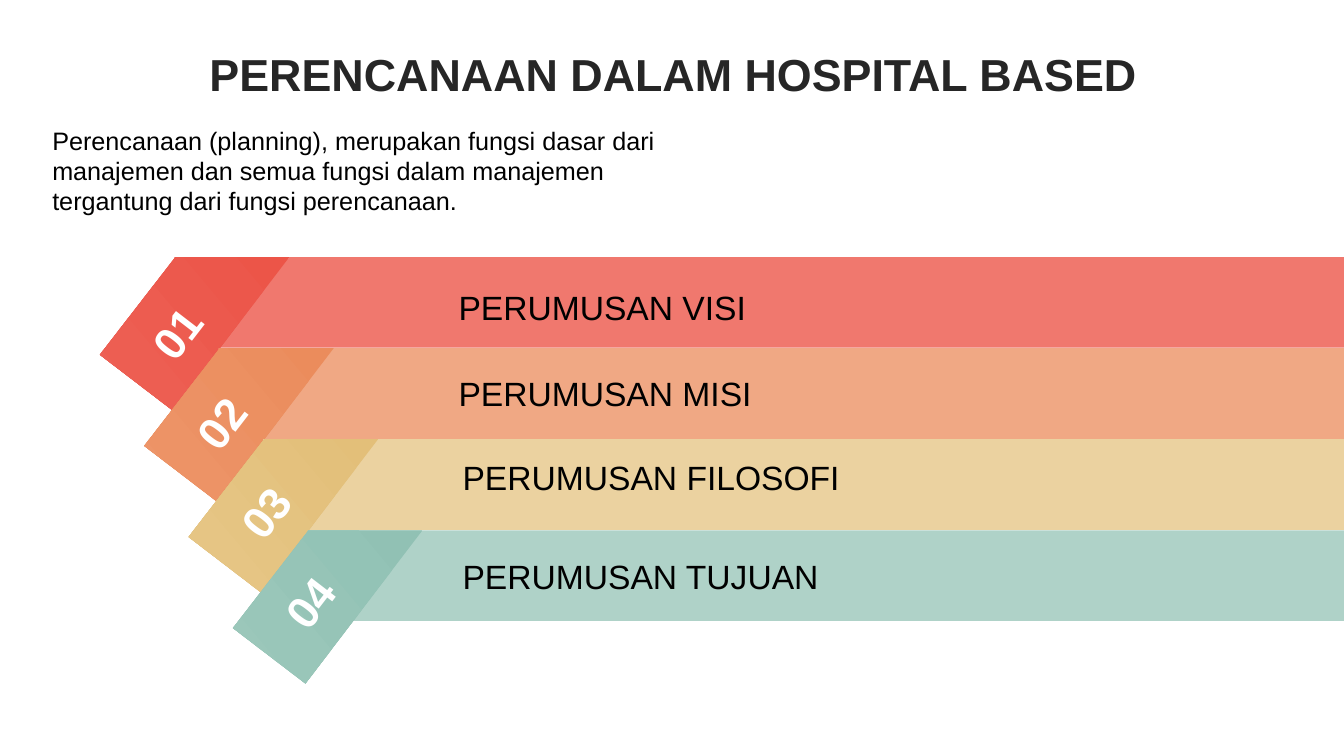
from dataclasses import dataclass

import pptx
import pptx.dml.color
import pptx.enum.shapes
import pptx.enum.text
import pptx.util
from pptx.shapes.autoshape import Shape
from pptx.slide import Slide

WIDTH = pptx.util.Inches(13.333)
HEIGHT = pptx.util.Inches(7.5)
ALIGN = pptx.enum.text.PP_ALIGN


@dataclass(frozen=True)
class Theme:
    font: str = "Arial"
    title: int = 32
    number: int = 32
    label: int = 24
    body: int = 18
    dark: str = "262626"
    black: str = "000000"
    white: str = "FFFFFF"
    bands: tuple[str, ...] = ("F0786E", "F0A884", "EBD2A0", "AFD2C8")
    tabs: tuple[tuple[str, str], ...] = (
        ("EC5548", "ED6055"),
        ("EB8C5C", "ED9569"),
        ("E3BF79", "E6C686"),
        ("91C1B4", "9BC7BA"),
    )


@dataclass(frozen=True)
class Box:
    """Left, top, width and height in percent of the slide."""
    left: float
    top: float
    width: float
    height: float

    def frame(self) -> tuple[int, int, int, int]:
        return (across(self.left), down(self.top),
                across(self.width), down(self.height))


@dataclass(frozen=True)
class Step:
    text: str
    left: float
    top: float


THEME = Theme()
STEPS = (
    Step("PERUMUSAN VISI", 33.38, 37.33),
    Step("PERUMUSAN MISI", 33.38, 48.67),
    Step("PERUMUSAN FILOSOFI", 33.68, 59.73),
    Step("PERUMUSAN TUJUAN", 33.68, 72.93),
)
SHIFT = 3.3      # percent across from one step to the next
DROP = 12.05     # percent down from one step to the next
TURN = 11.9      # percent down from one number to the next
TOP = 34
TAB = ((0, 12.93), (5.4, 20.27), (14.1, 0), (5.62, 0))


def across(share: float) -> int:
    return round(WIDTH * share / 100)


def down(share: float) -> int:
    return round(HEIGHT * share / 100)


def tint(code: str) -> pptx.dml.color.RGBColor:
    return pptx.dml.color.RGBColor.from_string(code)


def write(slide: Slide, box: Box, text: str, size: int, ink: str,
          bold: bool = False, align: ALIGN = ALIGN.LEFT) -> Shape:
    shape = slide.shapes.add_textbox(*box.frame())
    frame = shape.text_frame
    frame.word_wrap = True
    frame.text = text
    line = frame.paragraphs[0]
    line.alignment = align
    font = line.runs[0].font
    font.name = THEME.font
    font.size = pptx.util.Pt(size)
    font.bold = bold
    font.color.rgb = tint(ink)
    return shape


def head(slide: Slide) -> None:
    frame = write(slide, Box(2.63, 4.93, 94.95, 10.53),
                  "PERENCANAAN DALAM HOSPITAL BASED",
                  THEME.title, THEME.dark, True, ALIGN.CENTER).text_frame
    frame.vertical_anchor = pptx.enum.text.MSO_ANCHOR.MIDDLE
    frame.paragraphs[0].line_spacing = 0.9
    frame.paragraphs[0].space_before = pptx.util.Pt(10)
    write(slide, Box(3.15, 15.87, 50.03, 13.47),
          "Perencanaan (planning), merupakan fungsi dasar dari manajemen dan "
          "semua fungsi dalam manajemen tergantung dari fungsi perencanaan.",
          THEME.body, THEME.black)


def band(slide: Slide, index: int) -> None:
    left = 12.98 + SHIFT * index
    box = Box(left, TOP + DROP * index, 100 - left, 12)
    shape = slide.shapes.add_shape(
        pptx.enum.shapes.MSO_SHAPE.RECTANGLE, *box.frame())
    shape.shadow.inherit = False
    shape.fill.solid()
    shape.fill.fore_color.rgb = tint(THEME.bands[index])
    shape.line.fill.background()


def tab(slide: Slide, index: int) -> None:
    """Draw the slanted end of a band."""
    left, top = 7.43 + SHIFT * index, TOP + DROP * index
    first, *rest = [(across(left + x), down(top + y)) for x, y in TAB]
    pen = slide.shapes.build_freeform(*first)
    pen.add_line_segments(rest, close=True)
    shape = pen.convert_to_shape()
    shape.shadow.inherit = False
    shape.line.fill.background()
    shape.fill.gradient()
    shape.fill.gradient_angle = 220
    for stop, code in zip(shape.fill.gradient_stops, THEME.tabs[index]):
        stop.color.rgb = tint(code)


def words(slide: Slide, index: int, step: Step) -> None:
    """Write the number and the label of a step."""
    box = Box(9.15 + SHIFT * index, 39.73 + TURN * index, 7.95, 8.53)
    mark = write(slide, box, f"{index + 1:02}", THEME.number, THEME.white,
                 True, ALIGN.CENTER)
    mark.rotation = 307.5
    write(slide, Box(step.left, step.top, 55.58, 6.67), step.text,
          THEME.label, THEME.black)


def main() -> None:
    deck = pptx.Presentation()
    deck.slide_width, deck.slide_height = WIDTH, HEIGHT
    slide = deck.slides.add_slide(deck.slide_layouts[6])
    head(slide)
    for index in range(len(STEPS)):
        band(slide, index)
        tab(slide, index)
    for index, step in enumerate(STEPS):
        words(slide, index, step)
    deck.save("out.pptx")


if __name__ == "__main__":
    main()
